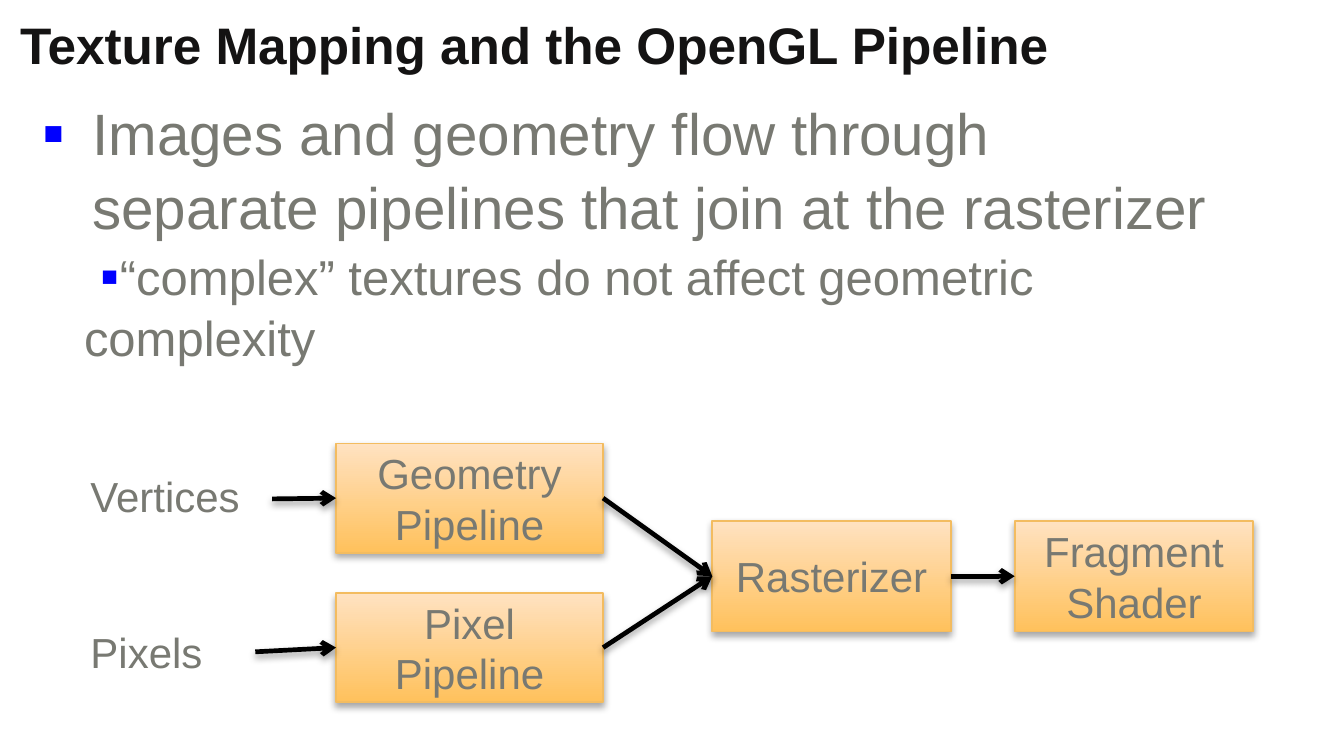
from lxml import etree
from pptx import Presentation
from pptx.dml.color import RGBColor
from pptx.enum.shapes import MSO_CONNECTOR, MSO_SHAPE
from pptx.enum.text import MSO_ANCHOR, MSO_AUTO_SIZE, PP_ALIGN
from pptx.oxml.ns import qn
from pptx.util import Inches, Pt

FONT = "Arial"
GREY, BLACK, BLUE = "787972", "000000", "0000FF"
TOP, LEFT, BOTTOM, RIGHT = range(4)


def color(value):
    return RGBColor.from_string(value)


def add_element(parent, tag, **attributes):
    element = etree.SubElement(parent, qn(tag))
    for name, value in attributes.items():
        element.set(name, str(value))
    return element


def place(shape, left, top, width, height):
    shape.left, shape.top = Inches(left), Inches(top)
    shape.width, shape.height = Inches(width), Inches(height)


def style_text(paragraph, size, value=GREY, bold=False):
    for run in paragraph.runs:
        font = run.font
        font.name, font.size, font.bold = FONT, Pt(size), bold
        font.color.rgb = color(value)


def add_shadow(shape, opacity, distance):
    properties = shape._element.spPr
    for old in properties.findall(qn("a:effectLst")):
        properties.remove(old)
    effects = add_element(properties, "a:effectLst")
    shadow = add_element(effects, "a:outerShdw", blurRad=Pt(3.1), dist=Pt(distance),
                         dir=90 * 60000, rotWithShape=0)
    shade = add_element(shadow, "a:srgbClr", val=BLACK)
    add_element(shade, "a:alpha", val=opacity * 1000)


def fill_title(slide, box):
    title = slide.shapes.title
    place(title, *box)
    frame = title.text_frame
    frame.text = "Texture Mapping and the OpenGL Pipeline"
    frame.auto_size = MSO_AUTO_SIZE.NONE
    frame.vertical_anchor = MSO_ANCHOR.TOP
    frame.margin_top = Inches(0.08)
    frame.paragraphs[0].alignment = PP_ALIGN.LEFT
    style_text(frame.paragraphs[0], 22, "141313", True)


def fill_body(slide, box):
    body = slide.placeholders[1]
    place(body, *box)
    frame = body.text_frame
    frame.auto_size = MSO_AUTO_SIZE.NONE
    frame.margin_left, frame.margin_top = Inches(0.24), Inches(0.07)
    # text, size, left margin, first line indent, space before
    items = [
        ("Images and geometry flow through separate pipelines that join at the rasterizer",
         25, 0.3, -0.34, 0),
        ("“complex” textures do not affect geometric complexity", 21, 0.25, 0.1, 1),
    ]
    for level, (text, size, margin, indent, before) in enumerate(items):
        paragraph = frame.add_paragraph() if level else frame.paragraphs[0]
        paragraph.text = text
        paragraph.level = level
        paragraph.line_spacing = 1.05
        paragraph.space_before, paragraph.space_after = Pt(before), Pt(0)
        properties = paragraph._p.get_or_add_pPr()
        properties.set("marL", str(Inches(margin)))
        properties.set("indent", str(Inches(indent)))
        add_element(add_element(properties, "a:buClr"), "a:srgbClr", val=BLUE)
        add_element(properties, "a:buSzPct", val=110000)
        add_element(properties, "a:buFont", typeface=FONT)
        add_element(properties, "a:buChar", char="▪")
        style_text(paragraph, size)


def add_stage(slide, text, box):
    stage = slide.shapes.add_shape(MSO_SHAPE.RECTANGLE, *map(Inches, box))
    stage.fill.gradient()
    stage.fill.gradient_angle = 90
    for stop, value in zip(stage.fill.gradient_stops, ("FFC15C", "FFE2C1")):
        stop.color.rgb = color(value)
    stage.line.color.rgb = color("F3BC60")
    stage.line.width = Pt(0.75)
    add_shadow(stage, 35, 1.8)
    frame = stage.text_frame
    frame.text = text
    frame.word_wrap = True
    frame.vertical_anchor = MSO_ANCHOR.MIDDLE
    frame.paragraphs[0].alignment = PP_ALIGN.CENTER
    style_text(frame.paragraphs[0], 18)
    return stage


def add_label(slide, text, box):
    frame = slide.shapes.add_textbox(*map(Inches, box)).text_frame
    frame.text = text
    frame.word_wrap = True
    frame.auto_size = MSO_AUTO_SIZE.SHAPE_TO_FIT_TEXT
    style_text(frame.paragraphs[0], 18)


def add_arrow(slide, target, source=None, start=(0, 0)):
    """Arrow to the left side of target, from source's right side or a point."""
    x, y = map(Inches, start)
    end = target.left, target.top + target.height // 2
    arrow = slide.shapes.add_connector(MSO_CONNECTOR.STRAIGHT, x, y, *end)
    if source is not None:
        arrow.begin_connect(source, RIGHT)
    arrow.end_connect(target, LEFT)
    arrow.line.color.rgb = color(BLACK)
    arrow.line.width = Pt(2)
    add_element(arrow.line._get_or_add_ln(), "a:tailEnd", type="arrow")
    add_shadow(arrow, 38, 1.6)


def draw_pipeline(slide, left, top):
    # Stages
    geometry = add_stage(slide, "Geometry Pipeline", (left + 1.56, top, 1.59, 0.65))
    pixel = add_stage(slide, "Pixel Pipeline", (left + 1.56, top + 0.89, 1.59, 0.65))
    rasterizer = add_stage(slide, "Rasterizer", (left + 3.8, top + 0.46, 1.42, 0.66))
    fragment = add_stage(slide, "Fragment Shader", (left + 5.6, top + 0.46, 1.42, 0.66))
    # Inputs
    add_label(slide, "Vertices", (left, top + 0.11, 1.54, 0.4))
    add_label(slide, "Pixels", (left, top + 1.04, 1.09, 0.4))
    add_arrow(slide, geometry, start=(left + 1.18, top + 0.33))
    add_arrow(slide, pixel, start=(left + 1.08, top + 1.24))
    # Flow between stages
    for source, target in ((geometry, rasterizer), (pixel, rasterizer), (rasterizer, fragment)):
        add_arrow(slide, target, source)


def main():
    presentation = Presentation()
    presentation.slide_width, presentation.slide_height = Inches(8), Inches(4.5)
    slide = presentation.slides.add_slide(presentation.slide_layouts[1])
    fill_title(slide, (0.02, 0, 7.35, 0.63))
    fill_body(slide, (0.01, 0.49, 7.36, 3.52))
    draw_pipeline(slide, 0.44, 2.64)
    presentation.save("out.pptx")


if __name__ == "__main__":
    main()
